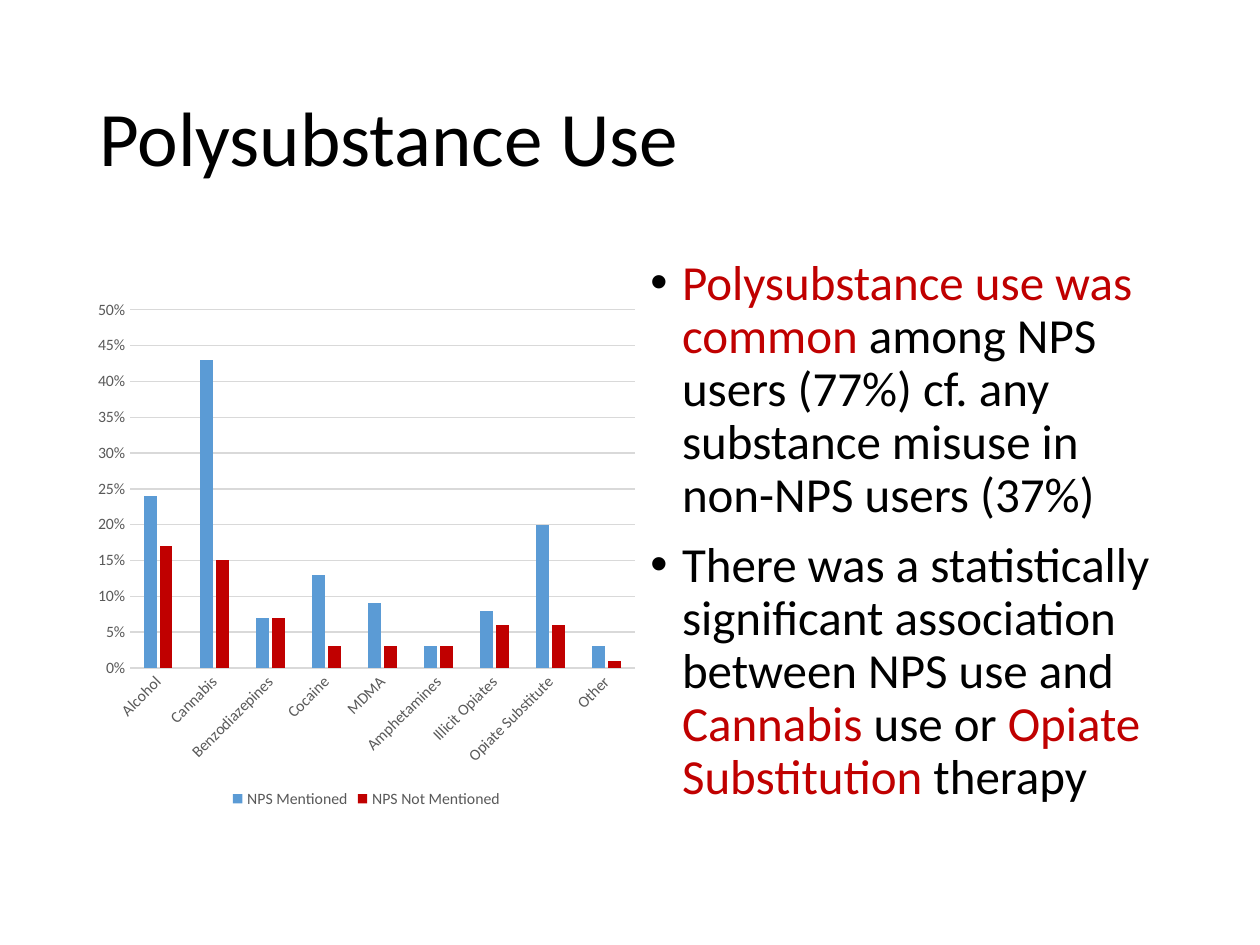
from dataclasses import dataclass

from lxml import etree
from pptx import Presentation
from pptx import util as u
from pptx.chart import data as chart_data
from pptx.dml.color import RGBColor
from pptx.enum import chart as chart_enum, text
from pptx.oxml.ns import qn


@dataclass(frozen=True)
class Theme:
    font: str = "Calibri"
    ink: str = "000000"
    accent: str = "C00000"
    blue: str = "5B9BD5"
    label: str = "595959"
    grid: str = "D9D9D9"
    title_size: int = 44
    body_size: int = 28
    label_size: int = 9
    line_width: float = 0.75
    line_spacing: float = 0.9
    paragraph_gap: int = 10


@dataclass(frozen=True)
class Box:
    left: float
    top: float
    width: float
    height: float

    def lengths(self) -> tuple:
        return tuple(u.Cm(n) for n in (self.left, self.top, self.width, self.height))


@dataclass(frozen=True)
class Span:
    wording: str
    color: str


@dataclass(frozen=True)
class Series:
    name: str
    color: str
    percentages: tuple


THEME = Theme()
TITLE_BOX = Box(1.75, 1.01, 21.9, 3.68)
BODY_BOX = Box(12.86, 5.08, 10.8, 12.08)
CHART_BOX = Box(1.75, 5.85, 11.27, 10.54)
INDENT = u.Cm(0.64)

TITLE = [Span("Polysubstance Use", THEME.ink)]
BULLETS = [
    [
        Span("Polysubstance use was common ", THEME.accent),
        Span("among NPS users (77%) cf. any substance misuse in non-NPS users (37%)", THEME.ink),
    ],
    [
        Span("There was a statistically significant association between NPS use and ", THEME.ink),
        Span("Cannabis", THEME.accent),
        Span(" use or ", THEME.ink),
        Span("Opiate Substitution ", THEME.accent),
        Span("therapy", THEME.ink),
    ],
]
SUBSTANCES = (
    "Alcohol", "Cannabis", "Benzodiazepines", "Cocaine", "MDMA",
    "Amphetamines", "Illicit Opiates", "Opiate Substitute", "Other",
)
SERIES = (
    Series("NPS Mentioned", THEME.blue, (24, 43, 7, 13, 9, 3, 8, 20, 3)),
    Series("NPS Not Mentioned", THEME.accent, (17, 15, 7, 3, 3, 3, 6, 6, 1)),
)


def style_font(font, size: int, color: str) -> None:
    font.name = THEME.font
    font.size = u.Pt(size)
    font.color.rgb = RGBColor.from_string(color)


def style_line(line) -> None:
    line.color.rgb = RGBColor.from_string(THEME.grid)
    line.width = u.Pt(THEME.line_width)


def add_text_frame(slide, box: Box, anchor):
    frame = slide.shapes.add_textbox(*box.lengths()).text_frame
    frame.word_wrap = True
    frame.vertical_anchor = anchor
    return frame


def write_spans(paragraph, spans: list[Span], size: int) -> None:
    paragraph.line_spacing = THEME.line_spacing
    for span in spans:
        run = paragraph.add_run()
        run.text = span.wording
        style_font(run.font, size, span.color)


def add_bullet(paragraph) -> None:
    properties = paragraph._p.get_or_add_pPr()
    properties.set("marL", str(INDENT))
    properties.set("indent", str(-INDENT))
    color = etree.SubElement(properties, qn("a:buClr"))
    etree.SubElement(color, qn("a:srgbClr"), val=THEME.ink)
    etree.SubElement(properties, qn("a:buFont"), typeface="Arial")
    etree.SubElement(properties, qn("a:buChar"), char="•")


def add_title(slide) -> None:
    frame = add_text_frame(slide, TITLE_BOX, text.MSO_ANCHOR.MIDDLE)
    write_spans(frame.paragraphs[0], TITLE, THEME.title_size)


def add_body(slide) -> None:
    frame = add_text_frame(slide, BODY_BOX, text.MSO_ANCHOR.TOP)
    for index, spans in enumerate(BULLETS):
        paragraph = frame.add_paragraph() if index else frame.paragraphs[0]
        add_bullet(paragraph)
        if index:
            paragraph.space_before = u.Pt(THEME.paragraph_gap)
        write_spans(paragraph, spans, THEME.body_size)


def style_axes(chart) -> None:
    for axis in (chart.category_axis, chart.value_axis):
        axis.major_tick_mark = chart_enum.XL_TICK_MARK.NONE
        axis.minor_tick_mark = chart_enum.XL_TICK_MARK.NONE
        style_font(axis.tick_labels.font, THEME.label_size, THEME.label)
    categories, values = chart.category_axis, chart.value_axis
    style_line(categories.format.line)
    label_body = categories._element.find(qn("c:txPr")).find(qn("a:bodyPr"))
    label_body.set("rot", str(-45 * 60000))
    label_body.set("vert", "horz")
    values.minimum_scale = 0
    values.maximum_scale = 0.5
    values.major_unit = 0.05
    values.has_major_gridlines = True
    style_line(values.major_gridlines.format.line)
    values.format.line.fill.background()
    values.tick_labels.number_format = "0%"
    values.tick_labels.number_format_is_linked = False


def add_substance_chart(slide) -> None:
    data = chart_data.CategoryChartData(number_format="0%")
    data.categories = SUBSTANCES
    for series in SERIES:
        data.add_series(series.name, [value / 100 for value in series.percentages])
    chart = slide.shapes.add_chart(
        chart_enum.XL_CHART_TYPE.COLUMN_CLUSTERED, *CHART_BOX.lengths(), data
    ).chart
    style_font(chart.font, THEME.label_size, THEME.label)
    chart.has_title = False
    chart.has_legend = True
    chart.legend.position = chart_enum.XL_LEGEND_POSITION.BOTTOM
    chart.legend.include_in_layout = False
    style_font(chart.legend.font, THEME.label_size, THEME.label)
    plot = chart.plots[0]
    plot.gap_width = 219
    plot.overlap = -27
    plot.vary_by_categories = False
    for columns, series in zip(plot.series, SERIES):
        columns.format.fill.solid()
        columns.format.fill.fore_color.rgb = RGBColor.from_string(series.color)
        columns.invert_if_negative = False
    style_axes(chart)


def main() -> None:
    presentation = Presentation()
    presentation.slide_width = u.Cm(25.4)
    presentation.slide_height = u.Cm(19.05)
    slide = presentation.slides.add_slide(presentation.slide_layouts[6])
    add_title(slide)
    add_body(slide)
    add_substance_chart(slide)
    presentation.save("out.pptx")


if __name__ == "__main__":
    main()
